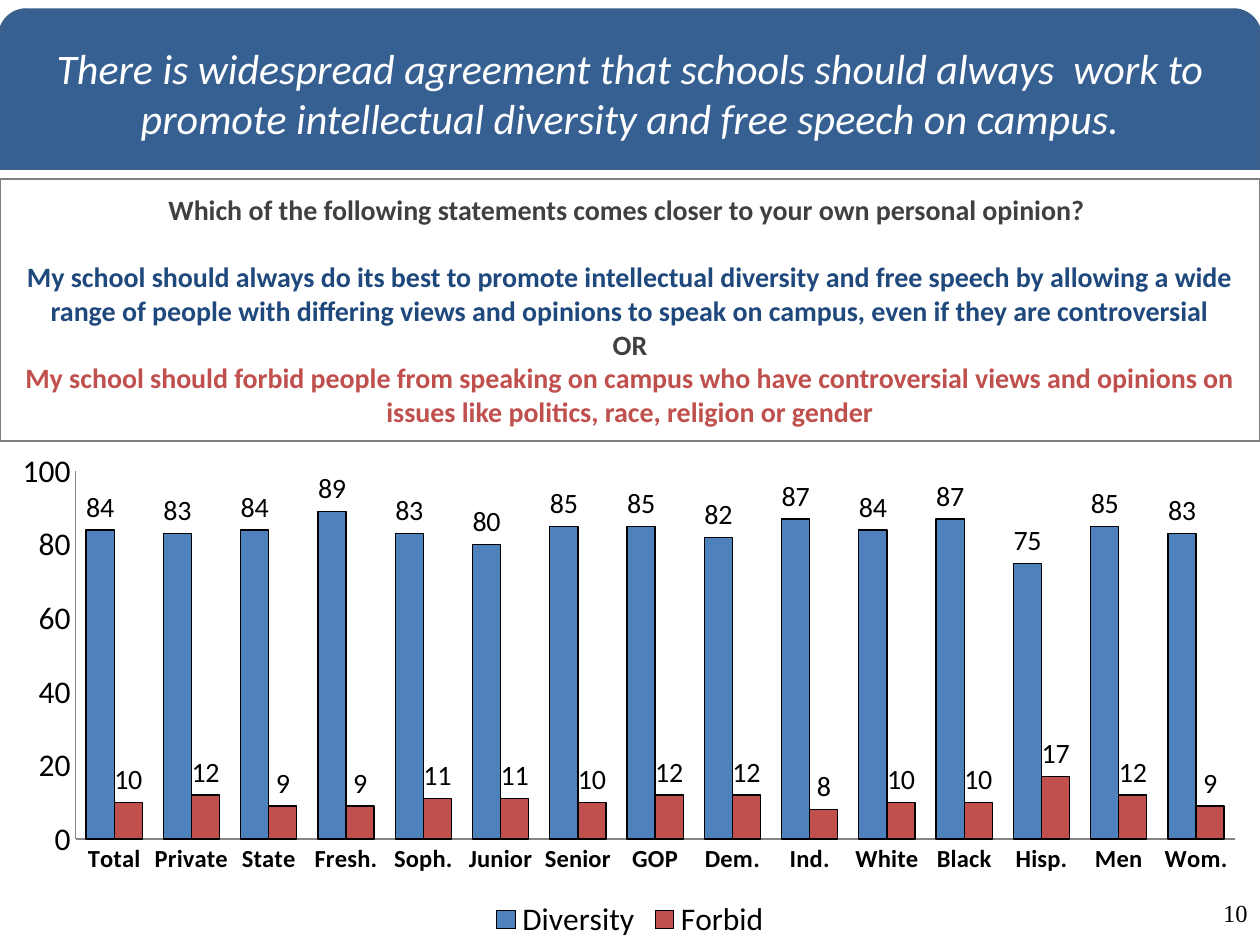
from lxml.etree import SubElement
from pptx import Presentation
from pptx.chart.data import CategoryChartData
from pptx.dml.color import RGBColor
from pptx.enum.chart import XL_CHART_TYPE, XL_LABEL_POSITION, XL_LEGEND_POSITION, XL_TICK_MARK
from pptx.enum.shapes import MSO_SHAPE
from pptx.enum.text import MSO_ANCHOR, MSO_AUTO_SIZE, PP_ALIGN
from pptx.oxml.ns import qn
from pptx.util import Emu, Pt

PX_PER_INCH = 126
BLUE, RED, GREY = "4F81BD", "C0504D", "404040"

HEADLINE = ("There is widespread agreement that schools should always  work to "
            "promote intellectual diversity and free speech on campus.")
# Wording, colour, space after in points
QUESTION = [
    ("Which of the following statements comes closer to your own personal opinion? ", GREY, 19.5),
    ("My school should always do its best to promote intellectual diversity and free speech "
     "by allowing a wide range of people with differing views and opinions to speak on campus, "
     "even if they are controversial", "1F497D", 0),
    ("OR", GREY, 0),
    ("My school should forbid people from speaking on campus who have controversial views "
     "and opinions on issues like politics, race, religion or gender", RED, 0),
]
GROUPS = ["Total", "Private", "State", "Fresh.", "Soph.", "Junior", "Senior", "GOP",
          "Dem.", "Ind.", "White", "Black", "Hisp.", "Men", "Wom."]
ANSWERS = [
    ("Diversity", BLUE, [84, 83, 84, 89, 83, 80, 85, 85, 82, 87, 84, 87, 75, 85, 83]),
    ("Forbid", RED, [10, 12, 9, 9, 11, 11, 10, 12, 12, 8, 10, 10, 17, 12, 9]),
]


def px(length):
    return Emu(round(length * 914400 / PX_PER_INCH))


def box(*lengths):
    return [px(length) for length in lengths]


def rgb(value):
    return RGBColor.from_string(value)


def style_font(font, size, color="000000", name="Calibri", bold=False, italic=False):
    font.size, font.name = Pt(size), name
    font.bold, font.italic = bold, italic
    font.color.rgb = rgb(color)


def set_outline(line, color, width):
    line.color.rgb = rgb(color)
    line.width = Pt(width)


def add_question(slide):
    question = slide.shapes.title
    question.left, question.top, question.width, question.height = box(0, 179, 1260, 262)
    set_outline(question.line, "808080", 0.75)
    frame = question.text_frame
    frame.auto_size = MSO_AUTO_SIZE.NONE
    frame.vertical_anchor = MSO_ANCHOR.MIDDLE
    frame.text = "\n".join(wording for wording, _, _ in QUESTION)
    for paragraph, (_, color, gap) in zip(frame.paragraphs, QUESTION):
        paragraph.alignment = PP_ALIGN.CENTER
        paragraph.space_before, paragraph.space_after = Pt(0), Pt(gap)
        style_font(paragraph.runs[0].font, 16, color, bold=True)


def add_banner(slide):
    banner = slide.shapes.add_shape(MSO_SHAPE.ROUND_2_SAME_RECTANGLE, *box(0, 10, 1260, 158))
    banner.shadow.inherit = False
    banner.fill.solid()
    banner.fill.fore_color.rgb = rgb("376092")
    set_outline(banner.line, "3A5F8C", 2)
    banner.text_frame.text = HEADLINE
    banner.text_frame.vertical_anchor = MSO_ANCHOR.MIDDLE
    paragraph = banner.text_frame.paragraphs[0]
    paragraph.alignment = PP_ALIGN.CENTER
    style_font(paragraph.runs[0].font, 24, "FFFFFF", italic=True)


def place_plot(chart, **fractions):
    """Fix the inner plot area as fractions of the chart frame."""
    plot_area = chart.plots[0]._element.getparent()
    for old_layout in plot_area.findall(qn("c:layout")):
        plot_area.remove(old_layout)
    layout = SubElement(plot_area, qn("c:layout"))
    plot_area.insert(0, layout)
    manual = SubElement(layout, qn("c:manualLayout"))
    settings = {"layoutTarget": "inner", "xMode": "edge", "yMode": "edge", **fractions}
    for tag, value in settings.items():
        SubElement(manual, qn(f"c:{tag}")).set("val", str(value))


def style_axis(axis, size, bold=False):
    axis.has_major_gridlines = False
    axis.major_tick_mark = axis.minor_tick_mark = XL_TICK_MARK.NONE
    set_outline(axis.format.line, "868686", 0.75)
    style_font(axis.tick_labels.font, size, bold=bold)


def style_series(series, color):
    series.format.fill.solid()
    series.format.fill.fore_color.rgb = rgb(color)
    set_outline(series.format.line, "000000", 0.75)
    labels = series.data_labels
    labels.show_value = True
    labels.position = XL_LABEL_POSITION.OUTSIDE_END
    style_font(labels.font, 16)


def add_answer_chart(slide):
    answers = CategoryChartData()
    answers.categories = GROUPS
    for name, _, values in ANSWERS:
        answers.add_series(name, values)
    chart = slide.shapes.add_chart(
        XL_CHART_TYPE.COLUMN_CLUSTERED, *box(0, 441, 1260, 504), answers).chart
    chart.has_title = False
    style_font(chart.font, 18)

    # Columns
    plot = chart.plots[0]
    plot.gap_width, plot.overlap, plot.vary_by_categories = 75, 0, False
    for series, (_, color, _) in zip(plot.series, ANSWERS):
        style_series(series, color)
    place_plot(chart, x=0.06, y=0.06, w=0.92, h=0.73)

    # Axes
    style_axis(chart.category_axis, 14, bold=True)
    style_axis(chart.value_axis, 18)
    chart.value_axis.minimum_scale, chart.value_axis.maximum_scale = 0, 100
    chart.value_axis.major_unit = 20

    # Legend
    chart.has_legend = True
    chart.legend.position = XL_LEGEND_POSITION.BOTTOM
    chart.legend.include_in_layout = False
    style_font(chart.legend.font, 18)


def add_page_number(slide):
    frame = slide.shapes.add_textbox(*box(1201, 861, 59, 73)).text_frame
    frame.word_wrap = True
    frame.vertical_anchor = MSO_ANCHOR.BOTTOM
    frame.text = "10"
    paragraph = frame.paragraphs[0]
    paragraph.alignment = PP_ALIGN.RIGHT
    style_font(paragraph.runs[0].font, 14, name="Times New Roman")


def main():
    presentation = Presentation()
    presentation.slide_width, presentation.slide_height = box(1260, 945)
    slide = presentation.slides.add_slide(presentation.slide_layouts[5])
    add_question(slide)
    add_banner(slide)
    add_answer_chart(slide)
    add_page_number(slide)
    presentation.save("out.pptx")


if __name__ == "__main__":
    main()
